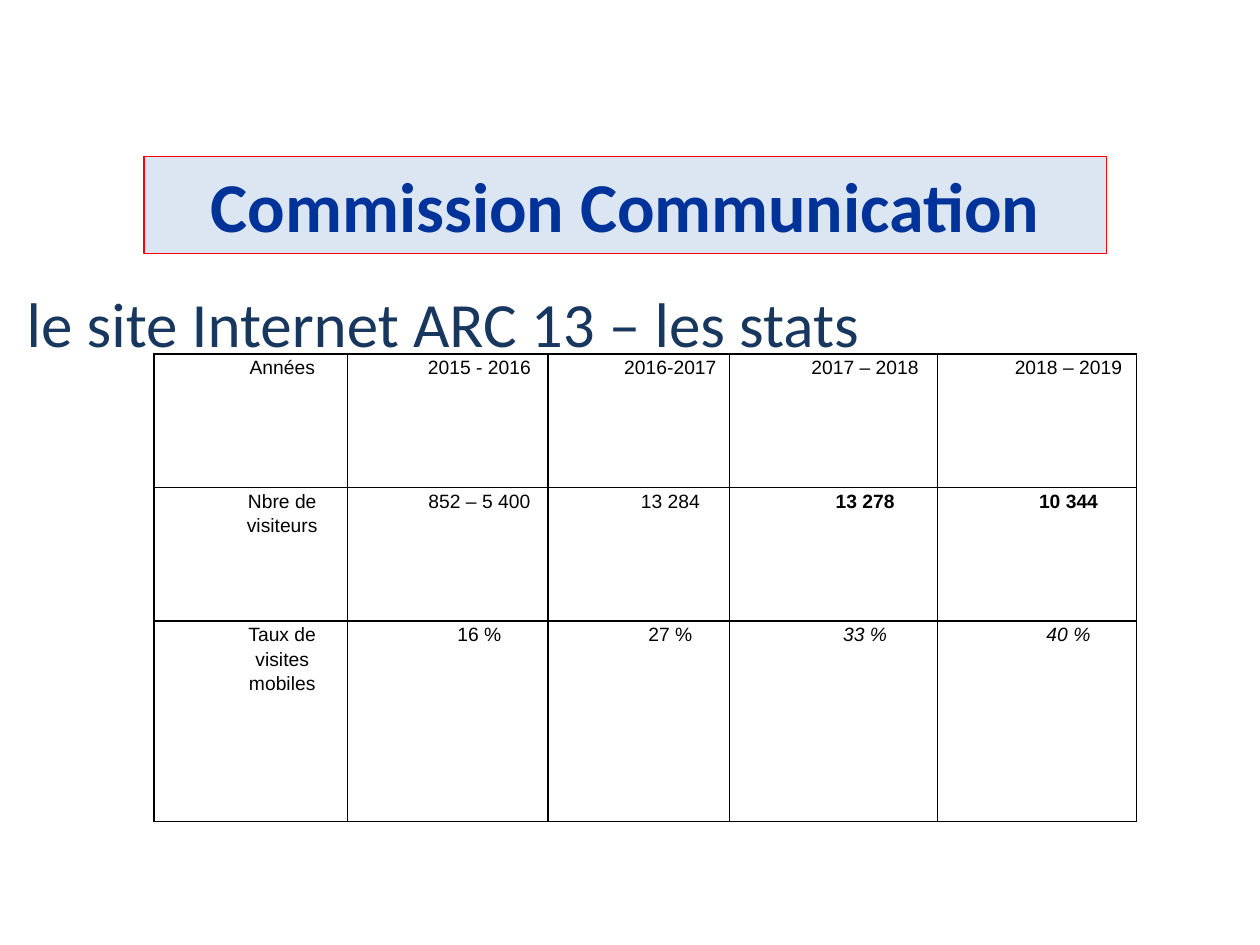
from lxml.etree import SubElement
from pptx import Presentation
from pptx.dml.color import RGBColor
from pptx.enum.text import MSO_ANCHOR as Anchor, PP_ALIGN as Align
from pptx.oxml.ns import qn
from pptx.util import Cm, Pt

BLACK = RGBColor(0x00, 0x00, 0x00)
NAVY = RGBColor(0x17, 0x37, 0x5E)
BLUE = RGBColor(0x00, 0x33, 0x99)
PALE_BLUE = RGBColor(0xDC, 0xE6, 0xF2)
RED = RGBColor(0xFF, 0x00, 0x00)

COLUMN_WIDTHS = [3.91, 4.04, 3.66, 4.19, 4.01]
ROW_HEIGHTS = [2.69, 2.69, 4.04]
STATS = [
    ["Années", "2015 - 2016", "2016-2017", "2017 – 2018", "2018 – 2019"],
    ["Nbre de visiteurs", "852 – 5 400", "13 284", "13 278", "10 344"],
    ["Taux de visites mobiles", "16 %", "27 %", "33 %", "40 %"],
]
FIRST_EMPHASISED_COLUMN = 3


def write(frame, text, font="Calibri", size=36, color=BLACK, bold=False,
          italic=False, align=Align.LEFT):
    """Put one formatted paragraph in a text frame and return it."""
    para = frame.paragraphs[0]
    para.alignment = align
    span = para.add_run()
    span.text = text
    span.font.name = font
    span.font.size = Pt(size)
    span.font.color.rgb = color
    span.font.bold = bold
    span.font.italic = italic
    return para


class StatsPage:
    heading_font = "Calibri"
    table_font = "Arial"

    def __init__(self, deck):
        self.page = deck.slides.add_slide(deck.slide_layouts[5])

    def title(self, text, left, top, width, height):
        box = self.page.shapes.title
        box.left, box.top, box.width, box.height = map(Cm, (left, top, width, height))
        box.fill.solid()
        box.fill.fore_color.rgb = PALE_BLUE
        box.line.color.rgb = RED
        box.line.width = Pt(0.75)
        box.text_frame.vertical_anchor = Anchor.MIDDLE
        write(box.text_frame, text, font=self.heading_font, size=40, color=BLUE,
              bold=True, align=Align.CENTER)

    def subtitle(self, text, left, top, width, height):
        box = self.page.shapes.add_textbox(*map(Cm, (left, top, width, height)))
        frame = box.text_frame
        frame.word_wrap = True
        frame.vertical_anchor = Anchor.BOTTOM
        frame.margin_left = Cm(0.54)
        frame.margin_bottom = Cm(0.26)
        write(frame, text, font=self.heading_font, color=NAVY)

    def table(self, rows, left, top):
        size = sum(COLUMN_WIDTHS), sum(ROW_HEIGHTS)
        table = self.page.shapes.add_table(
            len(rows), len(rows[0]), *map(Cm, (left, top, *size))).table
        table.first_row = table.horz_banding = False
        for column, width in zip(table.columns, COLUMN_WIDTHS):
            column.width = Cm(width)
        for row, height in zip(table.rows, ROW_HEIGHTS):
            row.height = Cm(height)
        for r, texts in enumerate(rows):
            for c, text in enumerate(texts):
                emphasised = c >= FIRST_EMPHASISED_COLUMN
                self.cell(table.cell(r, c), text, bold=emphasised and r == 1,
                          italic=emphasised and r == 2)

    def cell(self, cell, text, **emphasis):
        cell.margin_left = cell.margin_right = Cm(0.18)
        cell.margin_top = cell.margin_bottom = 0
        para = write(cell.text_frame, text, font=self.table_font, size=11,
                     align=Align.CENTER, **emphasis)
        para.line_spacing = 1.15
        para.space_after = Pt(6)
        properties = para._p.get_or_add_pPr()
        properties.set("marL", str(Cm(1.27)))
        properties.set("indent", "0")
        # Black border on every side
        cell_properties = cell._tc.get_or_add_tcPr()
        for side in ("lnL", "lnR", "lnT", "lnB"):
            line = SubElement(cell_properties, qn(f"a:{side}"), w=str(Pt(1)))
            fill = SubElement(line, qn("a:solidFill"))
            SubElement(fill, qn("a:srgbClr"), val=str(BLACK))
        cell.fill.background()


def main():
    deck = Presentation()
    deck.slide_width, deck.slide_height = Cm(25.4), Cm(19.05)
    stats = StatsPage(deck)

    # Headings
    stats.title("Commission Communication", 2.9, 3.15, 19.41, 1.96)
    stats.subtitle("le site Internet ARC 13 – les stats", 0, 4.52, 18.11, 3)

    # Visitor figures by year
    stats.table(STATS, 3.1, 7.14)

    deck.save("out.pptx")


if __name__ == "__main__":
    main()
